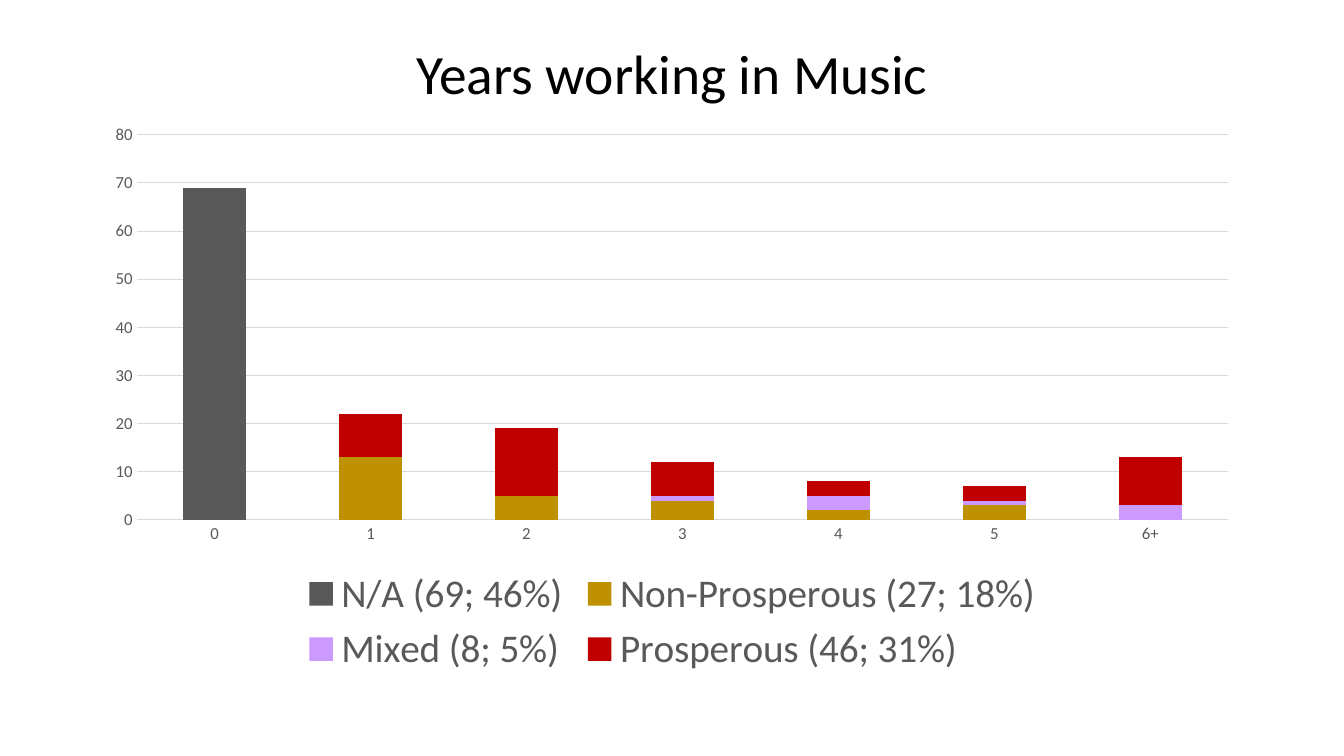
from dataclasses import dataclass

from pptx import Presentation
from pptx.chart.data import CategoryChartData
from pptx.dml.color import RGBColor
from pptx.enum.chart import XL_CHART_TYPE, XL_LEGEND_POSITION, XL_TICK_MARK
from pptx.enum.text import MSO_ANCHOR, MSO_AUTO_SIZE, PP_ALIGN
from pptx.util import Cm, Pt

STACKED = XL_CHART_TYPE.COLUMN_STACKED
LEGEND_BOTTOM = XL_LEGEND_POSITION.BOTTOM
NO_TICK = XL_TICK_MARK.NONE
MIDDLE = MSO_ANCHOR.MIDDLE
NO_FIT = MSO_AUTO_SIZE.NONE
CENTER = PP_ALIGN.CENTER
TITLE_ONLY = 5

YEARS = ["0", "1", "2", "3", "4", "5", "6+"]
GROUPS = [
    ("N/A (69; 46%)", "595959", [69, 0, 0, 0, None, None, None]),
    ("Non-Prosperous (27; 18%)", "BF9000", [None, 13, 5, 4, 2, 3, None]),
    ("Mixed (8; 5%)", "CC99FF", [0, None, None, 1, 3, 1, 3]),
    ("Prosperous (46; 31%)", "C00000", [0, 9, 14, 7, 3, 3, 10]),
]


@dataclass(frozen=True)
class Theme:
    font: str = "Calibri"
    title: str = "000000"
    label: str = "595959"
    rule: str = "D9D9D9"
    title_size: float = 39.6
    axis_size: float = 12
    legend_size: float = 28
    rule_width: float = 0.75


class SlideBuilder:
    def __init__(self, deck, theme):
        self.theme = theme
        self.slide = deck.slides.add_slide(deck.slide_layouts[TITLE_ONLY])

    def style_font(self, font, size, color):
        font.name = self.theme.font
        font.size = Pt(size)
        font.bold = False
        font.color.rgb = RGBColor.from_string(color)

    def style_rule(self, line):
        line.color.rgb = RGBColor.from_string(self.theme.rule)
        line.width = Pt(self.theme.rule_width)

    def add_title(self, text, left, top, width, height):
        box = self.slide.shapes.title
        box.left, box.top, box.width, box.height = left, top, width, height
        frame = box.text_frame
        frame.word_wrap = True
        frame.auto_size = NO_FIT
        frame.vertical_anchor = MIDDLE
        para = frame.paragraphs[0]
        para.alignment = CENTER
        para.line_spacing = 0.9
        span = para.add_run()
        span.text = text
        self.style_font(span.font, self.theme.title_size, self.theme.title)

    def add_stacked_columns(self, categories, groups, left, top, width, height):
        data = CategoryChartData()
        data.categories = categories
        for name, _, values in groups:
            data.add_series(name, values)
        chart = self.slide.shapes.add_chart(
            STACKED, left, top, width, height, data).chart
        chart.has_title = False
        self.style_font(chart.font, self.theme.axis_size, self.theme.label)

        plot = chart.plots[0]
        plot.gap_width = 150
        plot.overlap = 100
        plot.vary_by_categories = False
        for series, (_, color, _) in zip(plot.series, groups):
            series.invert_if_negative = False
            series.format.fill.solid()
            series.format.fill.fore_color.rgb = RGBColor.from_string(color)

        for axis in (chart.category_axis, chart.value_axis):
            axis.major_tick_mark = axis.minor_tick_mark = NO_TICK
            self.style_font(axis.tick_labels.font,
                            self.theme.axis_size, self.theme.label)
        self.style_rule(chart.category_axis.format.line)
        chart.value_axis.format.line.fill.background()
        self.style_rule(chart.value_axis.major_gridlines.format.line)

        chart.has_legend = True
        chart.legend.position = LEGEND_BOTTOM
        chart.legend.include_in_layout = False
        self.style_font(chart.legend.font,
                        self.theme.legend_size, self.theme.label)


def main():
    deck = Presentation()
    deck.slide_width, deck.slide_height = Cm(33.87), Cm(19.05)
    page = SlideBuilder(deck, Theme())
    left, width = Cm(2.33), Cm(29.21)
    page.add_title("Years working in Music", left, Cm(1.01), width, Cm(1.85))
    page.add_stacked_columns(YEARS, GROUPS, left, Cm(2.86), width, Cm(14.29))
    deck.save("out.pptx")


if __name__ == "__main__":
    main()
